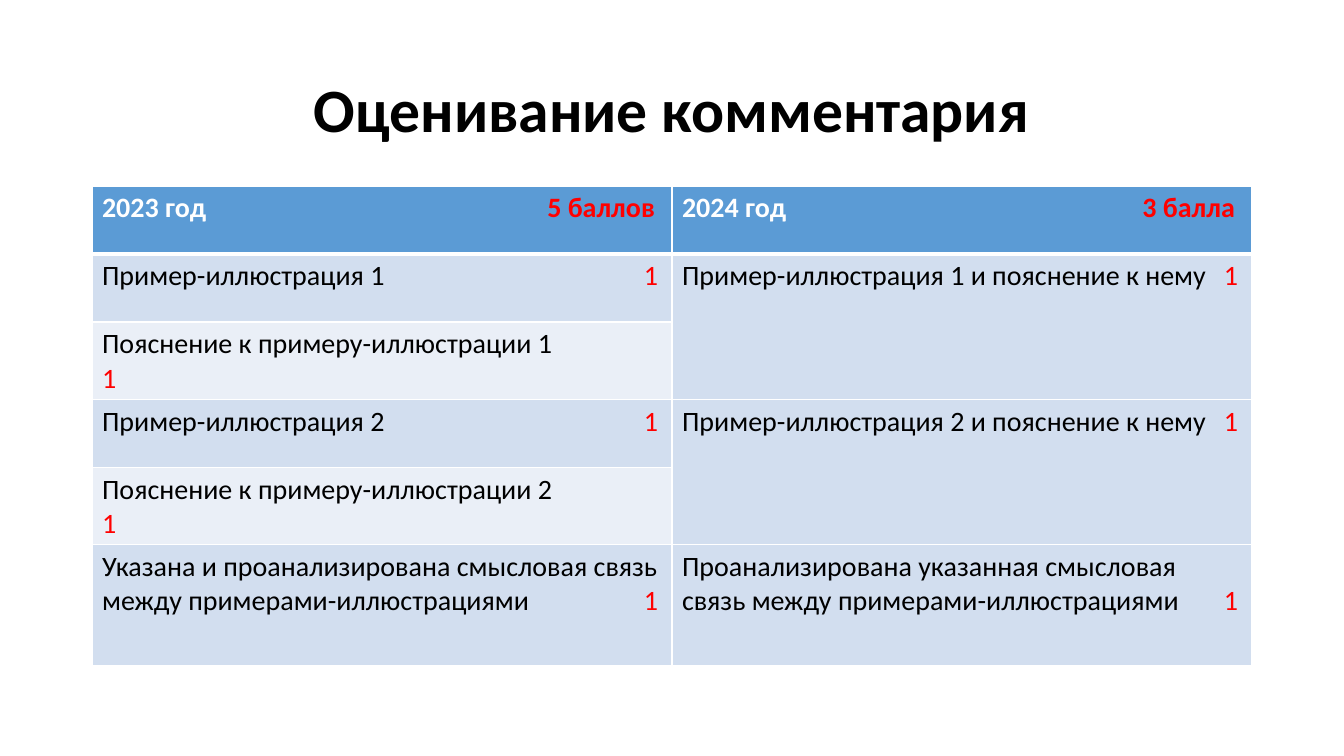
"""Builds a slide comparing how the commentary is scored in 2023 and 2024."""
import dataclasses

import lxml.etree
import pptx
import pptx.dml.color
import pptx.enum.text
import pptx.oxml.ns
import pptx.util


@dataclasses.dataclass(frozen=True)
class Theme:
    font: str = "Calibri"
    title_size: int = 44
    cell_size: int = 20
    ink: str = "000000"
    white: str = "FFFFFF"
    points: str = "FF0000"
    header: str = "5B9BD5"
    band_dark: str = "D2DEEF"
    band_light: str = "EAEFF7"
    rule: int = 1
    header_rule: int = 3


def px(length):
    return pptx.util.Emu(round(length * 914400 / 100.8))


class SlideBuilder:
    def __init__(self, page, theme):
        self.page = page
        self.theme = theme

    def style(self, span, size, color, bold):
        span.font.name = self.theme.font
        span.font.size = pptx.util.Pt(size)
        span.font.bold = bold
        span.font.color.rgb = pptx.dml.color.RGBColor.from_string(color)

    def title(self, text, left, top, width, height):
        box = self.page.shapes.add_textbox(px(left), px(top), px(width), px(height))
        frame = box.text_frame
        frame.word_wrap = True
        frame.vertical_anchor = pptx.enum.text.MSO_ANCHOR.MIDDLE
        frame.text = text
        para = frame.paragraphs[0]
        para.alignment = pptx.enum.text.PP_ALIGN.CENTER
        para.line_spacing = 0.9
        self.style(para.runs[0], self.theme.title_size, self.theme.ink, True)

    def table(self, left, top, widths, heights):
        frame = self.page.shapes.add_table(
            len(heights), len(widths), px(left), px(top), px(sum(widths)), px(sum(heights)))
        for column, width in zip(frame.table.columns, widths):
            column.width = px(width)
        for row, height in zip(frame.table.rows, heights):
            row.height = px(height)
        return frame.table

    def cell_look(self, cell, fill, top_rule, bottom_rule):
        cell.fill.solid()
        cell.fill.fore_color.rgb = pptx.dml.color.RGBColor.from_string(fill)
        qn = pptx.oxml.ns.qn
        rules = (("L", self.theme.rule), ("R", self.theme.rule),
                 ("T", top_rule), ("B", bottom_rule))
        for index, (side, weight) in enumerate(rules):
            line = lxml.etree.Element(qn(f"a:ln{side}"), w=str(pptx.util.Pt(weight)))
            solid = lxml.etree.SubElement(line, qn("a:solidFill"))
            lxml.etree.SubElement(solid, qn("a:srgbClr"), val=self.theme.white)
            cell._tc.get_or_add_tcPr().insert(index, line)

    def score(self, cell, label, points, tab, header):
        theme = self.theme
        para = cell.text_frame.paragraphs[0]
        para.text = label
        label_color = theme.white if header else theme.ink
        self.style(para.runs[0], theme.cell_size, label_color, header)
        span = para.add_run()
        span.text = points
        self.style(span, theme.cell_size, theme.points, header)
        qn = pptx.oxml.ns.qn
        stops = lxml.etree.SubElement(para._p.get_or_add_pPr(), qn("a:tabLst"))
        lxml.etree.SubElement(stops, qn("a:tab"), pos=str(px(tab)), algn="r")


ROWS = [
    (("2023 год\t", "5 баллов"), ("2024 год\t", "3 балла")),
    (("Пример-иллюстрация 1\t", "1"), ("Пример-иллюстрация 1 и пояснение к нему\t", "1")),
    (("Пояснение к примеру-иллюстрации 1\v", "1"), None),
    (("Пример-иллюстрация 2\t", "1"), ("Пример-иллюстрация 2 и пояснение к нему\t", "1")),
    (("Пояснение к примеру-иллюстрации 2\v", "1"), None),
    (("Указана и проанализирована смысловая связь между примерами-иллюстрациями\t", "1"),
     ("Проанализирована указанная смысловая связь между примерами-иллюстрациями\t", "1")),
]
HEADER_TAB = 553
BODY_TAB = 556


def main():
    deck = pptx.Presentation()
    deck.slide_width, deck.slide_height = px(1344), px(756)
    theme = Theme()
    builder = SlideBuilder(deck.slides.add_slide(deck.slide_layouts[6]), theme)
    builder.title("Оценивание комментария", 92, 40, 1160, 146)

    table = builder.table(92, 186, [580, 580], [68] * 5 + [121])
    for row, entries in enumerate(ROWS):
        header = row == 0
        for column, entry in enumerate(entries):
            cell = table.cell(row, column)
            light = column == 0 and row in (2, 4)
            fill = theme.header if header else theme.band_light if light else theme.band_dark
            builder.cell_look(cell, fill,
                              theme.header_rule if row == 1 else theme.rule,
                              theme.header_rule if header else theme.rule)
            if entry:
                builder.score(cell, *entry, HEADER_TAB if header else BODY_TAB, header)
            else:
                table.cell(row - 1, column).merge(cell)

    deck.save("out.pptx")


if __name__ == "__main__":
    main()
